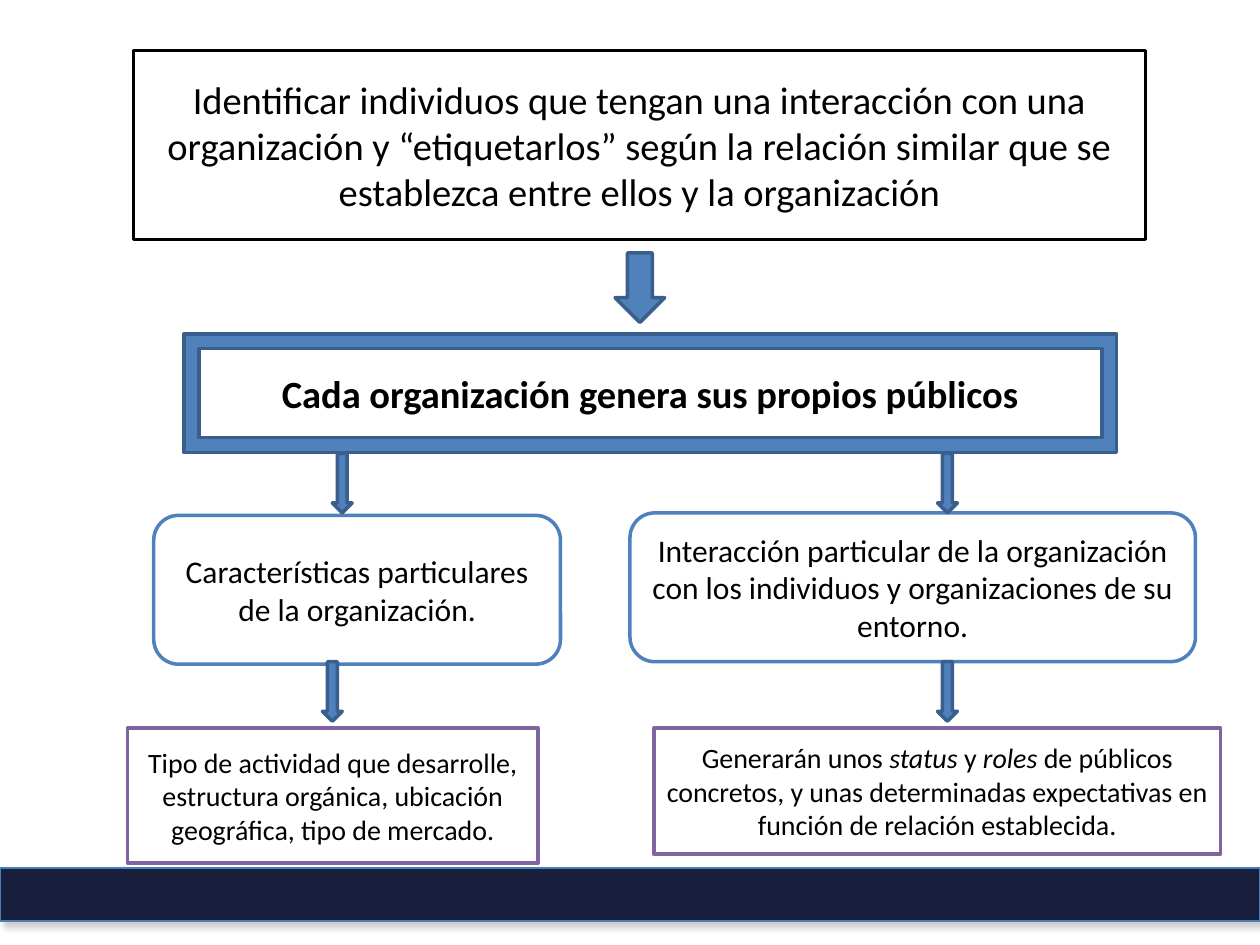
"""Build a slide showing how an organization generates its publics."""
from lxml import etree
from pptx import Presentation
from pptx.dml.color import RGBColor
from pptx.enum.shapes import MSO_SHAPE
from pptx.enum.text import MSO_ANCHOR, PP_ALIGN
from pptx.oxml.ns import qn
from pptx.util import Cm, Pt

RECT, ROUNDED = MSO_SHAPE.RECTANGLE, MSO_SHAPE.ROUNDED_RECTANGLE
FRAME, ARROW = MSO_SHAPE.FRAME, MSO_SHAPE.DOWN_ARROW
CENTER, MIDDLE = PP_ALIGN.CENTER, MSO_ANCHOR.MIDDLE

BLACK, WHITE = RGBColor(0, 0, 0), RGBColor(255, 255, 255)
BLUE, DARK_BLUE = RGBColor(0x4F, 0x81, 0xBD), RGBColor(0x3A, 0x5F, 0x8C)
PURPLE = RGBColor(0x80, 0x64, 0xA2)
NAVY, BAR_EDGE = RGBColor(0x19, 0x1E, 0x3C), RGBColor(0x4A, 0x7E, 0xBB)

STYLES = {
    "definition": dict(kind=RECT, fill=WHITE, line=BLACK, size=22),
    "thesis": dict(kind=FRAME, fill=BLUE, line=DARK_BLUE, size=22, bold=True),
    "factor": dict(kind=ROUNDED, fill=WHITE, line=BLUE, size=18),
    "result": dict(kind=RECT, fill=WHITE, line=PURPLE, size=16),
}

BOXES = [
    ("definition", (2.69, 1.02, 20.4, 3.81),
     ["Identificar individuos que tengan una interacción con una organización y "
      "“etiquetarlos” según la relación similar que se establezca entre ellos y la "
      "organización"]),
    ("thesis", (3.71, 6.73, 18.8, 2.39),
     ["Cada organización genera sus propios públicos"]),
    ("factor", (12.7, 10.34, 11.4, 3),
     ["Interacción particular de la organización con los individuos y organizaciones "
      "de su entorno."]),
    ("factor", (3.1, 10.39, 8.2, 3),
     ["Características particulares de la organización."]),
    ("result", (2.57, 14.68, 8.28, 2.72),
     ["Tipo de actividad que desarrolle, estructura orgánica, ubicación geográfica, "
      "tipo de mercado."]),
    ("result", (13.18, 14.68, 11.43, 2.54),
     ["Generarán unos ", "status", " y ", "roles",
      " de públicos concretos, y unas determinadas expectativas en función de "
      "relación establecida."]),
]
ITALIC_TERMS = {"status", "roles"}

MAIN_ARROW = (12.4, 5.1, 1, 1.4)
SMALL_ARROW_SIZE = (0.4, 1.2)
SMALL_ARROW_CORNERS = [(6.7, 9.14), (6.5, 13.34), (18.9, 9.14), (18.9, 13.34)]
BOTTOM_BAR = (0, 17.5, 25.4, 1.07)
BAR_SHADOW = {"blurRad": Pt(4), "dist": Pt(3), "dir": 45 * 60000, "rotWithShape": 0}


def add_figure(slide, kind, place, fill, line, width=2):
    figure = slide.shapes.add_shape(kind, *map(Cm, place))
    figure.shadow.inherit = False
    figure.fill.solid()
    figure.fill.fore_color.rgb = fill
    figure.line.color.rgb = line
    figure.line.width = Pt(width)
    return figure


def write_text(figure, parts, size, bold=False):
    frame = figure.text_frame
    frame.word_wrap = True
    frame.vertical_anchor = MIDDLE
    paragraph = frame.paragraphs[0]
    paragraph.alignment = CENTER
    for part in parts:
        run = paragraph.add_run()
        run.text = part
        font_format = {"name": "Calibri", "size": Pt(size), "bold": bold,
                       "italic": part in ITALIC_TERMS}
        for attribute, value in font_format.items():
            setattr(run.font, attribute, value)
        run.font.color.rgb = BLACK


def add_shadow(figure):
    effects = figure._element.spPr.find(qn("a:effectLst"))
    shadow = etree.SubElement(effects, qn("a:outerShdw"),
                              {key: str(value) for key, value in BAR_SHADOW.items()})
    color = etree.SubElement(shadow, qn("a:srgbClr"), val="808080")
    etree.SubElement(color, qn("a:alpha"), val="40000")


def main():
    deck = Presentation()
    deck.slide_width, deck.slide_height = Cm(25.4), Cm(19.05)
    slide = deck.slides.add_slide(deck.slide_layouts[6])

    for style_name, place, parts in BOXES:
        style = STYLES[style_name]
        box = add_figure(slide, style["kind"], place, style["fill"], style["line"])
        write_text(box, parts, style["size"], style.get("bold", False))

    small_arrows = [corner + SMALL_ARROW_SIZE for corner in SMALL_ARROW_CORNERS]
    for place in [MAIN_ARROW] + small_arrows:
        add_figure(slide, ARROW, place, BLUE, DARK_BLUE)

    add_shadow(add_figure(slide, RECT, BOTTOM_BAR, NAVY, BAR_EDGE, 0.75))
    deck.save("out.pptx")


if __name__ == "__main__":
    main()
